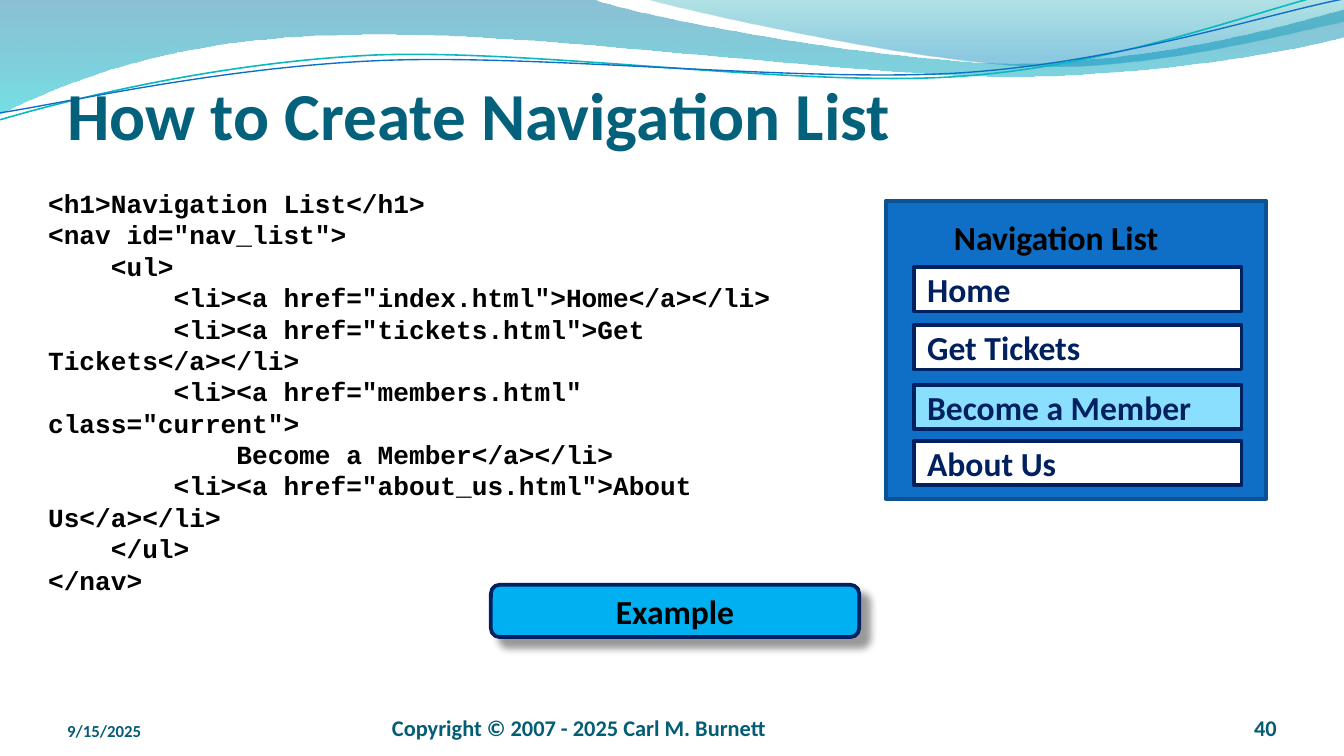
from dataclasses import dataclass

from lxml import etree
from pptx import Presentation
from pptx.dml.color import RGBColor
from pptx.enum.shapes import MSO_SHAPE
from pptx.enum.text import MSO_ANCHOR, MSO_AUTO_SIZE, PP_ALIGN
from pptx.oxml.ns import qn
from pptx.util import Pt

RECT, ROUND = MSO_SHAPE.RECTANGLE, MSO_SHAPE.ROUNDED_RECTANGLE
LEFT, CENTER, RIGHT = PP_ALIGN.LEFT, PP_ALIGN.CENTER, PP_ALIGN.RIGHT
TOP, MIDDLE, BOTTOM = MSO_ANCHOR.TOP, MSO_ANCHOR.MIDDLE, MSO_ANCHOR.BOTTOM
FIT_SHAPE, NO_FIT = MSO_AUTO_SIZE.SHAPE_TO_FIT_TEXT, MSO_AUTO_SIZE.NONE
TITLE_ONLY = 5
STRAND_TILT = 357.3

COLORS = {
    "title": "04617B", "footer": "045D75", "black": "000000", "navy": "002060",
    "white": "FFFFFF", "panel": "0F6FC6", "panel_edge": "0B5292",
    "current": "8ADFFF", "button": "00B0F0", "teal_line": "0AB8BF",
    "deep_blue": "0074A1", "aqua": "00C6CF", "teal": "00A1A9", "blue": "008BBF",
}

CODE = """<h1>Navigation List</h1>
<nav id="nav_list">
    <ul>
        <li><a href="index.html">Home</a></li>
        <li><a href="tickets.html">Get Tickets</a></li>
        <li><a href="members.html" class="current">
            Become a Member</a></li>
        <li><a href="about_us.html">About Us</a></li>
    </ul>
</nav>"""


@dataclass
class Box:
    left: float
    top: float
    width: float
    height: float

    def emu(self) -> tuple:
        return Pt(self.left), Pt(self.top), Pt(self.width), Pt(self.height)


@dataclass
class Style:
    size: float
    color: str = "black"
    font: str = "Calibri"
    align: PP_ALIGN = LEFT


@dataclass
class Stop:
    position: float
    color: str
    opacity: int


@dataclass
class Wave:
    start: tuple
    segments: list  # two numbers: line; six numbers: cubic curve


@dataclass
class Band(Wave):
    stops: tuple


@dataclass
class Strand(Wave):
    color: str
    weight: float


BANDS = [
    Band((0, 0), [(316.8, -0.7), (342.7, 9.4, 478.1, 33.8, 545.8, 33.8),
                  (614.2, 33.8, 689.8, 13.7, 720, 5), (720.7, 19.4),
                  (707.8, 23.8, 626.4, 41, 537.1, 41),
                  (447.8, 40.3, 275, 15.1, 185, 18.7),
                  (92.9, 19.4, 33.1, 44.6, -0.7, 61.2)],
         (Stop(0, "deep_blue", 45), Stop(1, "aqua", 55))),
    Band((344.9, -0.7), [(366.5, 5.8, 491, 33.1, 553.7, 35.3),
                         (616.3, 37.4, 691.9, 17.3, 720, 11.5), (720, 0)],
         (Stop(0, "teal", 30), Stop(0.8, "blue", 45))),
]
STRANDS = [
    Strand((-1.1, 47.2), [(33.9, 38.7, 114, 22.2, 199.7, 22),
                          (285.4, 22.4, 425.4, 49.9, 512, 48.2),
                          (599.3, 46.6, 677, 19.3, 719.9, 11.9)], "teal_line", 0.85),
    Strand((-0.9, 43.5), [(33.1, 40, 118.2, 24.6, 204, 25.1),
                          (290.4, 25.5, 429.1, 47.9, 515.7, 46.3),
                          (601.6, 44.5, 680, 22.3, 721.1, 16.4)], "panel", 0.75),
]


def rgb(name: str) -> RGBColor:
    return RGBColor.from_string(COLORS[name])


def draw_outline(shapes, wave: Wave, close: bool):
    """Lay all points as lines, then join each curve's three points."""
    points = [(Pt(seg[i]), Pt(seg[i + 1]))
              for seg in wave.segments for i in range(0, len(seg), 2)]
    builder = shapes.build_freeform(Pt(wave.start[0]), Pt(wave.start[1]), scale=1.0)
    builder.add_line_segments(points, close=close)
    sp = builder.convert_to_shape()
    sp.shadow.inherit = False
    lines = iter(list(sp.element.spPr.iter(qn("a:lnTo"))))
    for seg in wave.segments:
        group = [next(lines) for _ in range(len(seg) // 2)]
        if len(group) == 3:
            curve = etree.Element(qn("a:cubicBezTo"))
            group[0].addprevious(curve)
            for line in group:
                curve.append(line[0])
                line.getparent().remove(line)
    return sp


def draw_band(shapes, band: Band) -> None:
    sp = draw_outline(shapes, band, True)
    sp.line.fill.background()
    sp.fill.gradient()
    sp.fill.gradient_angle = 270
    for target, stop in zip(sp.fill.gradient_stops, band.stops):
        target.position = stop.position
        target.color.rgb = rgb(stop.color)
    for clr, stop in zip(sp.element.spPr.iter(qn("a:srgbClr")), band.stops):
        etree.SubElement(clr, qn("a:alpha"), val=str(stop.opacity * 1000))


def draw_strand(shapes, strand: Strand) -> None:
    sp = draw_outline(shapes, strand, False)
    sp.rotation = STRAND_TILT
    sp.fill.background()
    sp.line.color.rgb = rgb(strand.color)
    sp.line.width = Pt(strand.weight)


def write(sp, text: str, style: Style, anchor: MSO_ANCHOR) -> None:
    tf = sp.text_frame
    tf.text = text
    tf.vertical_anchor = anchor
    for p in tf.paragraphs:
        p.alignment = style.align
        for r in p.runs:
            r.font.name = style.font
            r.font.size = Pt(style.size)
            r.font.bold = True
            r.font.color.rgb = rgb(style.color)


def set_margins(sp, side: float, top: float) -> None:
    tf = sp.text_frame
    tf.margin_left = tf.margin_right = Pt(side)
    tf.margin_top, tf.margin_bottom = Pt(top), Pt(0)


def add_text(shapes, box: Box, text: str, style: Style,
             anchor=TOP, wrap=True, fit=FIT_SHAPE):
    sp = shapes.add_textbox(*box.emu())
    sp.text_frame.word_wrap = wrap
    sp.text_frame.auto_size = fit
    write(sp, text, style, anchor)
    return sp


def add_box(shapes, box: Box, fill: str, edge: str, kind=RECT):
    sp = shapes.add_shape(kind, *box.emu())
    sp.shadow.inherit = False
    sp.fill.solid()
    sp.fill.fore_color.rgb = rgb(fill)
    sp.line.color.rgb = rgb(edge)
    sp.line.width = Pt(2)
    return sp


def add_shadow(sp) -> None:
    effects = sp.element.spPr.find(qn("a:effectLst"))
    outer = etree.SubElement(effects, qn("a:outerShdw"), blurRad=str(Pt(4)),
                             dist=str(Pt(7)), dir="2700000", algn="tl", rotWithShape="0")
    clr = etree.SubElement(outer, qn("a:srgbClr"), val=COLORS["black"])
    etree.SubElement(clr, qn("a:alpha"), val="40000")


def main() -> None:
    prs = Presentation()
    prs.slide_width, prs.slide_height = Pt(720), Pt(405)
    s = prs.slides.add_slide(prs.slide_layouts[TITLE_ONLY])

    # Wave decoration
    for band in BANDS:
        draw_band(s.shapes, band)
    strands = s.shapes.add_group_shape().shapes
    for strand in STRANDS:
        draw_strand(strands, strand)

    # Title, brought in front of the waves
    title = s.shapes.title
    title.element.getparent().append(title.element)
    title.left, title.top, title.width, title.height = Box(36, 41.4, 648, 41).emu()
    write(title, "How to Create Navigation List", Style(36, "title"), BOTTOM)
    title.text_frame.auto_size = NO_FIT
    set_margins(title, 0, 3.6)

    # Footer
    for left, width, text, size, align in (
            (36, 168, "9/15/2025", 9, LEFT),
            (210, 264, "Copyright © 2007 - 2025 Carl M. Burnett", 12, LEFT),
            (624, 60, "40", 12, RIGHT)):
        sp = add_text(s.shapes, Box(left, 375.3, width, 21.6), text,
                      Style(size, "footer", align=align), BOTTOM, fit=NO_FIT)
        set_margins(sp, 0, 0)

    # Code listing
    add_text(s.shapes, Box(18.7, 96.9, 441.4, 211), CODE, Style(14, font="Courier New"))

    # Navigation panel
    panel = s.shapes.add_group_shape().shapes
    add_box(panel, Box(474.6, 107.5, 203.8, 159.8), "panel", "panel_edge")
    for top, label, fill in ((143.1, "Home", "white"), (174.2, "Get Tickets", "white"),
                             (206.1, "Become a Member", "current"),
                             (236.2, "About Us", "white")):
        sp = add_box(panel, Box(489.6, top, 175.5, 23.8), fill, "navy")
        write(sp, label, Style(18, "navy"), MIDDLE)
    add_text(panel, Box(504, 112.7, 125.3, 28.8), "Navigation List", Style(18), wrap=False)

    # Example button
    button = add_box(s.shapes, Box(263, 313.3, 197.3, 28), "button", "navy", ROUND)
    add_shadow(button)
    write(button, "Example", Style(18, align=CENTER), MIDDLE)

    prs.save("out.pptx")


if __name__ == "__main__":
    main()
